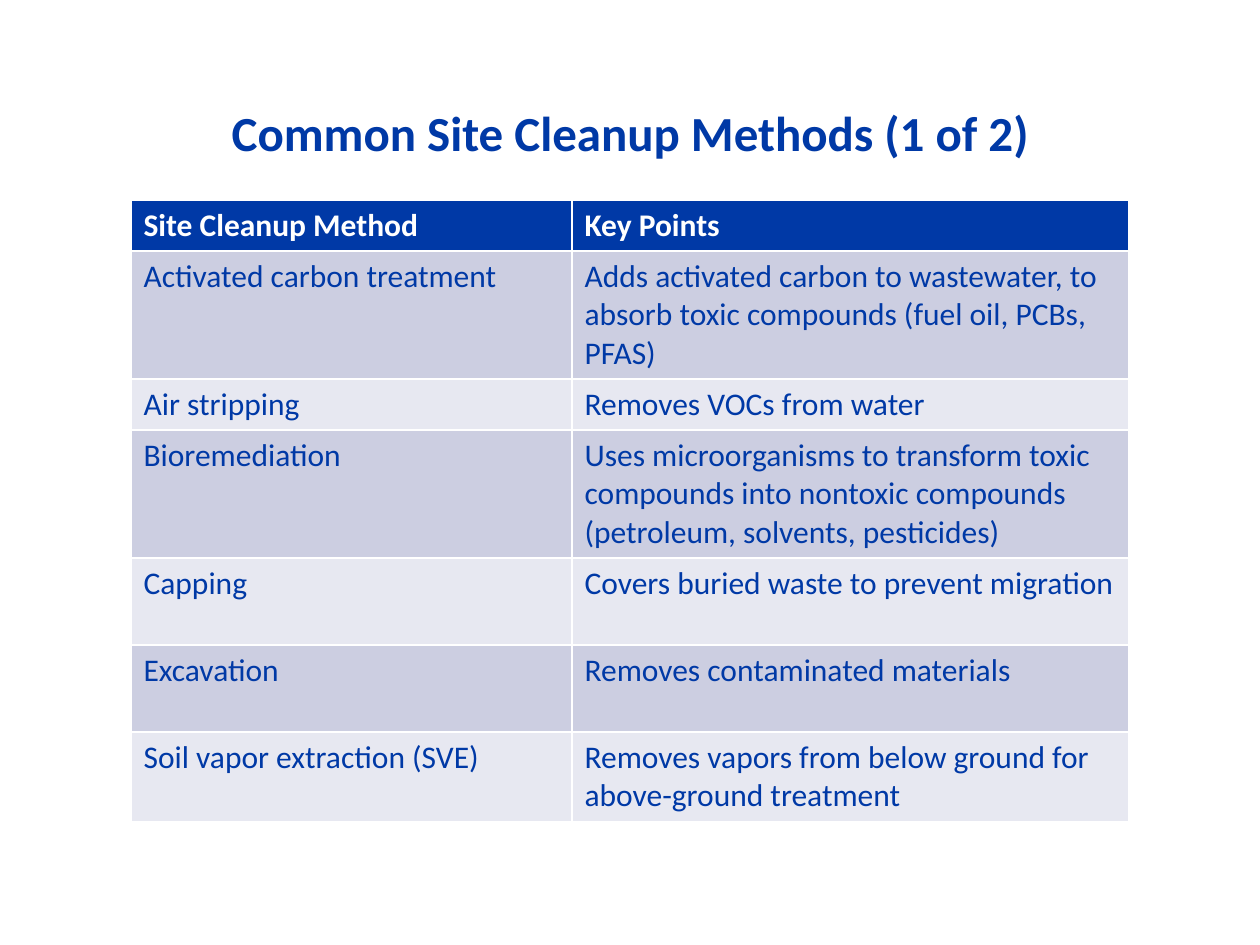
from pptx import Presentation
from pptx.dml.color import RGBColor
from pptx.enum.text import MSO_ANCHOR, PP_ALIGN
from pptx.util import Pt

TITLE = "Common Site Cleanup Methods (1 of 2)"
HEADER = ("Site Cleanup Method", "Key Points")
METHODS = [
    ("Activated carbon treatment",
     "Adds activated carbon to wastewater, to absorb toxic compounds (fuel oil, PCBs, PFAS)"),
    ("Air stripping", "Removes VOCs from water"),
    ("Bioremediation",
     "Uses microorganisms to transform toxic compounds into nontoxic compounds "
     "(petroleum, solvents, pesticides)"),
    ("Capping", "Covers buried waste to prevent migration"),
    ("Excavation", "Removes contaminated materials"),
    ("Soil vapor extraction (SVE)",
     "Removes vapors from below ground for above-ground treatment"),
]
COLUMN_WIDTHS = (441, 557)
ROW_HEIGHTS = (39, 87, 50, 123, 87, 87, 87)

FONT = "Calibri"
BLUE = RGBColor(0x00, 0x39, 0xA6)
WHITE = RGBColor(0xFF, 0xFF, 0xFF)
BANDS = (RGBColor(0xCC, 0xCE, 0xE1), RGBColor(0xE7, 0xE8, 0xF1))
EMU_PER_PX = 914400 / 126


def px(length):
    return round(length * EMU_PER_PX)


def set_font(paragraph, size, color, bold):
    font = paragraph.font
    font.name, font.size, font.bold = FONT, Pt(size), bold
    font.color.rgb = color


def add_title(slide):
    title = slide.shapes.title
    title.left, title.top, title.width, title.height = map(px, (63, 38, 1134, 130))
    frame = title.text_frame
    frame.text = TITLE
    frame.vertical_anchor = MSO_ANCHOR.BOTTOM
    paragraph = frame.paragraphs[0]
    paragraph.alignment = PP_ALIGN.CENTER
    paragraph.line_spacing = Pt(30)
    set_font(paragraph, 28, BLUE, True)


def add_methods_table(slide):
    rows = [HEADER] + METHODS
    bounds = map(px, (131, 200, sum(COLUMN_WIDTHS), 654))
    shape = slide.shapes.add_table(len(rows), len(HEADER), *bounds)
    table = shape.table
    for column, width in zip(table.columns, COLUMN_WIDTHS):
        column.width = px(width)
    for index, (row, height, texts) in enumerate(zip(table.rows, ROW_HEIGHTS, rows)):
        row.height = px(height)
        is_header = index == 0
        for cell, text in zip(row.cells, texts):
            cell.text = text
            cell.fill.solid()
            cell.fill.fore_color.rgb = BLUE if is_header else BANDS[(index - 1) % 2]
            set_font(cell.text_frame.paragraphs[0], 18, WHITE if is_header else BLUE, is_header)
    shape.height = px(654)


def main():
    presentation = Presentation()
    presentation.slide_width, presentation.slide_height = px(1260), px(945)
    slide = presentation.slides.add_slide(presentation.slide_layouts[5])
    add_title(slide)
    add_methods_table(slide)
    presentation.save("out.pptx")


if __name__ == "__main__":
    main()
